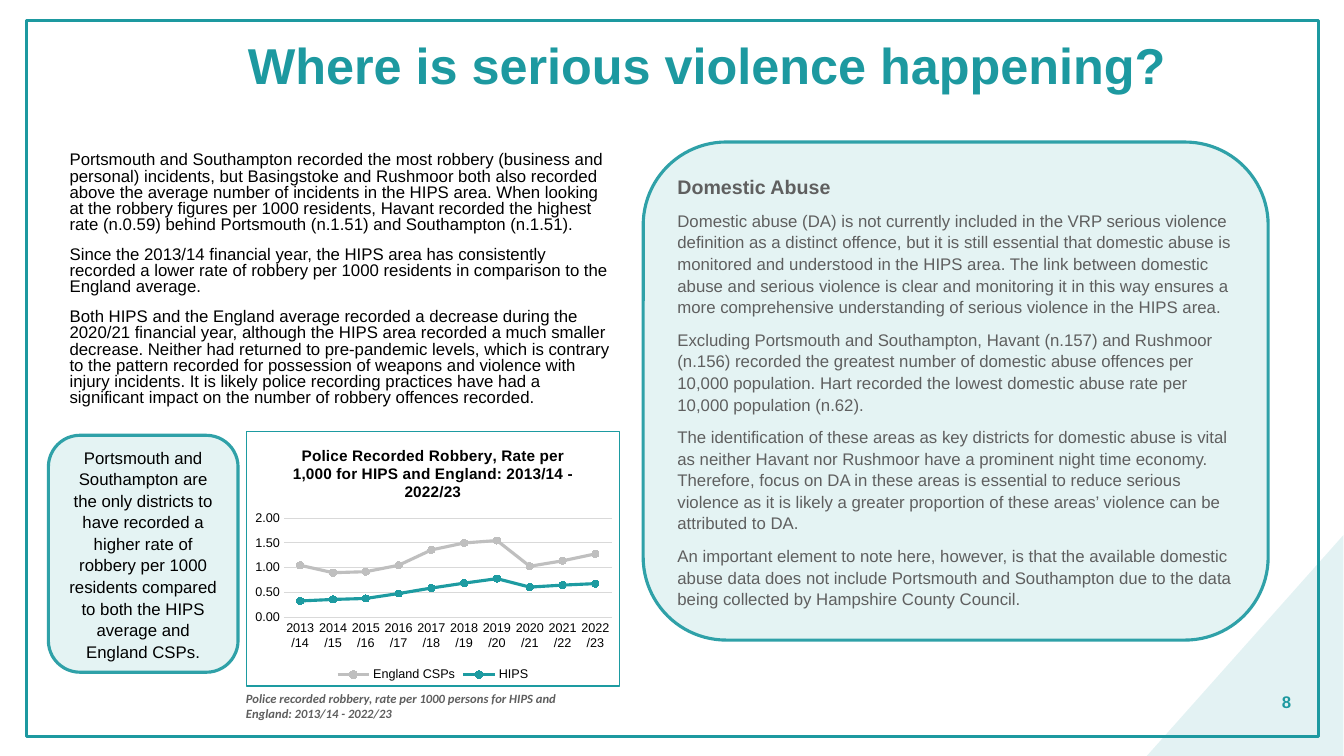
from lxml.etree import SubElement
from pptx import Presentation
from pptx.chart.data import CategoryChartData
from pptx.dml.color import RGBColor
from pptx.enum.chart import XL_CHART_TYPE, XL_LEGEND_POSITION, XL_MARKER_STYLE, XL_TICK_MARK
from pptx.enum.shapes import MSO_SHAPE
from pptx.enum.text import MSO_ANCHOR, MSO_AUTO_SIZE, PP_ALIGN
from pptx.oxml import parse_xml
from pptx.oxml.ns import nsdecls, qn
from pptx.util import Cm, Pt

TEAL = RGBColor(0x1D, 0x99, 0xA0)
CHART_TEAL = RGBColor(0x1D, 0x9B, 0xA1)
OUTLINE_TEAL = RGBColor(0x2F, 0xA1, 0xA8)
PALE_TEAL = RGBColor(0xE4, 0xF3, 0xF3)
WHITE = RGBColor(0xFF, 0xFF, 0xFF)
BLACK = RGBColor(0, 0, 0)
GREY = RGBColor(0x5F, 0x5F, 0x5F)
SERIES_GREY = RGBColor(0xBF, 0xBF, 0xBF)
GRID_GREY = RGBColor(0xD9, 0xD9, 0xD9)


def add_box(preset, left, top, width, height, fill=None, line=None):
    shape = slide.shapes.add_shape(preset, Cm(left), Cm(top), Cm(width), Cm(height))
    shape.shadow.inherit = False
    if fill is None:
        shape.fill.background()
    else:
        shape.fill.solid()
        shape.fill.fore_color.rgb = fill
    if line is None:
        shape.line.fill.background()
    else:
        shape.line.color.rgb = line
        shape.line.width = Pt(2.25)
    return shape


def write_text(shape, text, size, color, bold=False, font="Arial", align=PP_ALIGN.LEFT,
               spacing=1.0, before=0, after=0, anchor=MSO_ANCHOR.MIDDLE):
    frame = shape.text_frame
    frame.text = text
    frame.word_wrap = True
    frame.auto_size = MSO_AUTO_SIZE.NONE
    frame.vertical_anchor = anchor
    for index, paragraph in enumerate(frame.paragraphs):
        paragraph.alignment = align
        paragraph.line_spacing = spacing
        paragraph.space_before = Pt(before if index else 0)
        paragraph.space_after = Pt(after)
        for run in paragraph.runs:
            run.font.name = font
            run.font.size = Pt(size)
            run.font.bold = bold
            run.font.color.rgb = color
    return frame


presentation = Presentation()
presentation.slide_width = Cm(33.87)
presentation.slide_height = Cm(19.05)
slide = presentation.slides.add_slide(presentation.slide_layouts[1])

add_box(MSO_SHAPE.RECTANGLE, 0.66, 0.51, 32.56, 18.06, line=TEAL)
corner = add_box(MSO_SHAPE.RIGHT_TRIANGLE, 28.6, 13.79, 5.56, 4.95, fill=TEAL)
corner.rotation = 270
corner_color = corner.fill._xPr.find(qn("a:solidFill")).find(qn("a:srgbClr"))
SubElement(corner_color, qn("a:alpha"), val="12000")

page_number = slide.shapes.add_textbox(Cm(31.95), Cm(17.17), Cm(0.84), Cm(1.02))
write_text(page_number, "8", 12, TEAL, bold=True, align=PP_ALIGN.RIGHT)

title = slide.shapes.title
title.left, title.top, title.width, title.height = Cm(5.99), Cm(0.48), Cm(26.8), Cm(2.46)
write_text(title, "Where is serious violence happening?", 36, TEAL, bold=True, spacing=0.9)

robbery_text = [
    "Portsmouth and Southampton recorded the most robbery (business and personal) incidents, but "
    "Basingstoke and Rushmoor both also recorded above the average number of incidents in the HIPS "
    "area. When looking at the robbery figures per 1000 residents, Havant recorded the highest rate "
    "(n.0.59) behind Portsmouth (n.1.51) and Southampton (n.1.51).",
    "Since the 2013/14 financial year, the HIPS area has consistently recorded a lower rate of "
    "robbery per 1000 residents in comparison to the England average.",
    "Both HIPS and the England average recorded a decrease during the 2020/21 financial year, "
    "although the HIPS area recorded a much smaller decrease. Neither had returned to pre-pandemic "
    "levels, which is contrary to the pattern recorded for possession of weapons and violence with "
    "injury incidents. It is likely police recording practices have had a significant impact on the "
    "number of robbery offences recorded.",
]
body = slide.placeholders[1]
body.left, body.top, body.width, body.height = Cm(1.5), Cm(3.73), Cm(14.15), Cm(7.14)
body_frame = write_text(body, "\n".join(robbery_text), 12, BLACK, spacing=0.8, before=10,
                        anchor=MSO_ANCHOR.TOP)
for paragraph in body_frame.paragraphs:
    properties = paragraph._p.get_or_add_pPr()
    properties.set("marL", "0")
    properties.set("indent", "0")
    SubElement(properties, qn("a:buNone"))

abuse_text = [
    "Domestic Abuse",
    "Domestic abuse (DA) is not currently included in the VRP serious violence definition as a "
    "distinct offence, but it is still essential that domestic abuse is monitored and understood in "
    "the HIPS area. The link between domestic abuse and serious violence is clear and monitoring it "
    "in this way ensures a more comprehensive understanding of serious violence in the HIPS area.",
    "Excluding Portsmouth and Southampton, Havant (n.157) and Rushmoor (n.156) recorded the greatest "
    "number of domestic abuse offences per 10,000 population. Hart recorded the lowest domestic "
    "abuse rate per 10,000 population (n.62).",
    "The identification of these areas as key districts for domestic abuse is vital as neither "
    "Havant nor Rushmoor have a prominent night time economy. Therefore, focus on DA in these areas "
    "is essential to reduce serious violence as it is likely a greater proportion of these areas’ "
    "violence can be attributed to DA.",
    "An important element to note here, however, is that the available domestic abuse data does not "
    "include Portsmouth and Southampton due to the data being collected by Hampshire County Council.",
]
abuse_card = add_box(MSO_SHAPE.ROUNDED_RECTANGLE, 16.21, 3.58, 15.75, 12.55, PALE_TEAL, OUTLINE_TEAL)
abuse_frame = write_text(abuse_card, "\n".join(abuse_text), 12, GREY, spacing=1.07, after=8)
heading = abuse_frame.paragraphs[0].runs[0]
heading.font.size = Pt(14)
heading.font.bold = True

chart_data = CategoryChartData(number_format="0.00")
chart_data.categories = [f"{year}/{year % 100 + 1}" for year in range(2013, 2023)]
chart_data.add_series("England CSPs", [1.05, 0.9, 0.92, 1.05, 1.36, 1.5, 1.55, 1.03, 1.14, 1.28])
chart_data.add_series("HIPS", [0.33, 0.36, 0.38, 0.48, 0.59, 0.69, 0.78, 0.61, 0.65, 0.68])
chart = slide.shapes.add_chart(XL_CHART_TYPE.LINE_MARKERS, Cm(6.2), Cm(10.87), Cm(9.42), Cm(6.43),
                               chart_data).chart
chart.font.name = "Arial"
chart.font.size = Pt(10)
chart.font.color.rgb = BLACK

chart.has_title = True
chart_title = chart.chart_title
chart_title.include_in_layout = False
chart_title.text_frame.text = "Police Recorded Robbery, Rate per 1,000 for HIPS and England: 2013/14 - 2022/23"
title_font = chart_title.text_frame.paragraphs[0].runs[0].font
title_font.name = "Arial"
title_font.size = Pt(11)
title_font.bold = True
title_font.color.rgb = BLACK

chart.has_legend = True
chart.legend.position = XL_LEGEND_POSITION.BOTTOM
chart.legend.include_in_layout = False
for part in (chart.legend.font, chart.category_axis.tick_labels.font, chart.value_axis.tick_labels.font):
    part.name = "Arial"
    part.size = Pt(9)
    part.color.rgb = BLACK

value_axis = chart.value_axis
value_axis.minimum_scale = 0
value_axis.maximum_scale = 2
value_axis.major_unit = 0.5
value_axis.tick_labels.number_format = "0.00"
value_axis.tick_labels.number_format_is_linked = False
value_axis.format.line.fill.background()
for axis in (value_axis, chart.category_axis):
    axis.major_tick_mark = XL_TICK_MARK.NONE
    axis.minor_tick_mark = XL_TICK_MARK.NONE
for line in (value_axis.major_gridlines.format.line, chart.category_axis.format.line):
    line.color.rgb = GRID_GREY
    line.width = Pt(0.75)

chart.plots[0].vary_by_categories = False
for series, color in zip(chart.plots[0].series, (SERIES_GREY, CHART_TEAL)):
    series.smooth = False
    series.format.line.color.rgb = color
    series.format.line.width = Pt(2.25)
    series.marker.style = XL_MARKER_STYLE.CIRCLE
    series.marker.size = 5
    series.marker.format.fill.solid()
    series.marker.format.fill.fore_color.rgb = color
    series.marker.format.line.color.rgb = color

chart_xml = chart._chartSpace.find(qn("c:chart"))
chart_xml.addnext(parse_xml(
    f'<c:spPr {nsdecls("c", "a")}><a:solidFill><a:srgbClr val="{WHITE}"/></a:solidFill>'
    f'<a:ln w="9525"><a:solidFill><a:srgbClr val="{CHART_TEAL}"/></a:solidFill></a:ln></c:spPr>'))
plot_area = chart_xml.find(qn("c:plotArea"))
for layout in plot_area.findall(qn("c:layout")):
    plot_area.remove(layout)
plot_area.insert(0, parse_xml(
    f'<c:layout {nsdecls("c")}><c:manualLayout><c:layoutTarget val="inner"/>'
    '<c:xMode val="edge"/><c:yMode val="edge"/><c:x val="0.1"/><c:y val="0.34"/>'
    '<c:w val="0.88"/><c:h val="0.39"/></c:manualLayout></c:layout>'))

callout = add_box(MSO_SHAPE.ROUNDED_RECTANGLE, 1.22, 10.97, 4.78, 5.97, PALE_TEAL, OUTLINE_TEAL)
write_text(callout, "Portsmouth and Southampton are the only districts to have recorded a higher rate of "
           "robbery per 1000 residents compared to both the HIPS average and England CSPs.",
           12, BLACK, align=PP_ALIGN.CENTER, spacing=1.07, after=8)

caption = add_box(MSO_SHAPE.RECTANGLE, 6.2, 17.4, 8.36, 0.76, WHITE)
caption_frame = write_text(caption, "Police recorded robbery, rate per 1000 persons for HIPS and England: "
                           "2013/14 - 2022/23", 9, GREY, bold=True, font="Calibri", after=10,
                           anchor=MSO_ANCHOR.TOP)
caption_frame.margin_left = caption_frame.margin_right = 0
caption_frame.margin_top = caption_frame.margin_bottom = 0
caption_frame.paragraphs[0].runs[0].font.italic = True

presentation.save("out.pptx")
